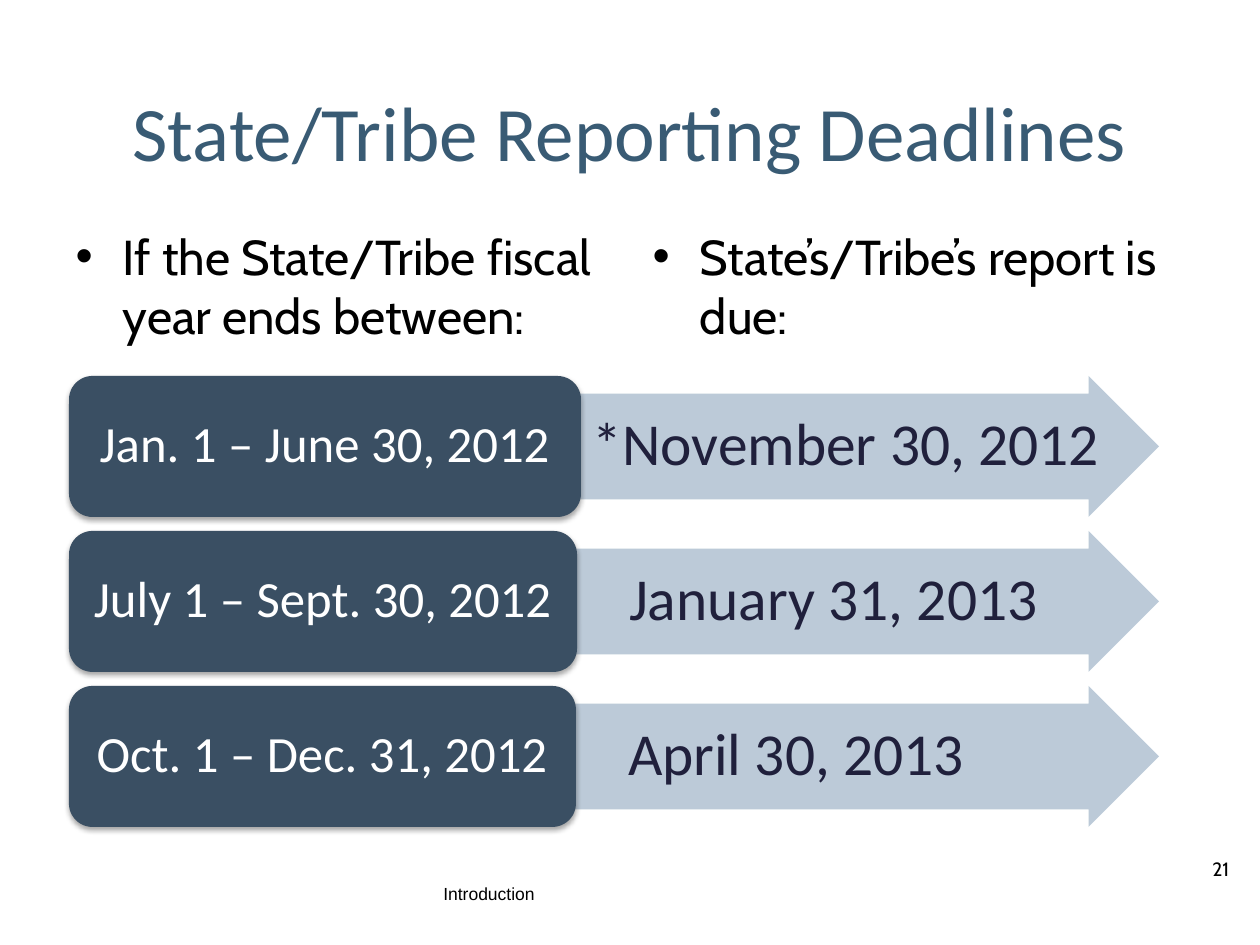
from lxml import etree
from pptx import Presentation
from pptx import util as u
from pptx.dml.color import RGBColor
from pptx.enum import shapes, text
from pptx.oxml import ns

SCALE = 914400 / 126  # EMU in one px
TITLE = RGBColor(0x39, 0x5B, 0x74)
BLACK = RGBColor(0, 0, 0)
WHITE = RGBColor(0xFF, 0xFF, 0xFF)
CARD = RGBColor(0x3A, 0x4F, 0x63)
ARROW = RGBColor(0xB5, 0xC5, 0xD4)
INK = RGBColor(0x20, 0x20, 0x3C)

# Row geometry in px
TOP, PITCH, HIGH = 376, 155, 141
LEFT, RIGHT = 69, 1159

# Period, due date, card width, arrow left, text indent
ROWS = [
    ("Jan. 1 – June 30, 2012", "*November 30, 2012", 512, 551, 42),
    ("July 1 – Sept. 30, 2012", "January 31, 2013", 508, 547, 82),
    ("Oct. 1 – Dec. 31, 2012", "April 30, 2013", 507, 546, 82),
]


def px(n):
    return u.Emu(round(n * SCALE))


def place(shape, *box):
    shape.left, shape.top, shape.width, shape.height = map(px, box)


def write(frame, words, size, font, color, align=None):
    frame.word_wrap = True
    frame.auto_size = text.MSO_AUTO_SIZE.NONE
    para = frame.paragraphs[0]
    para.alignment = align
    para.space_before = u.Pt(0)
    run = para.add_run()
    run.text = words
    run.font.size = u.Pt(size)
    run.font.name = font
    run.font.color.rgb = color
    return para


def fill_holder(holder, box, *style):
    place(holder, *box)
    write(holder.text_frame, *style)


def add_label(slide, box, *style):
    label = slide.shapes.add_textbox(*map(px, box))
    write(label.text_frame, *style)


def add_block(group, kind, box, color, pads, *style):
    block = group.shapes.add_shape(kind, *map(px, box))
    block.shadow.inherit = False
    block.fill.solid()
    block.fill.fore_color.rgb = color
    block.line.fill.background()
    frame = block.text_frame
    frame.margin_left, frame.margin_right = px(pads[0]), px(pads[1])
    frame.margin_top = frame.margin_bottom = px(3)
    frame.vertical_anchor = text.MSO_ANCHOR.MIDDLE
    write(frame, *style).line_spacing = 0.9
    return block


def set_alpha(color, percent):
    etree.SubElement(color, ns.qn("a:alpha"), val=str(percent * 1000))


def add_shadow(block):
    effects = block._element.spPr.find(ns.qn("a:effectLst"))
    outer = etree.SubElement(
        effects, ns.qn("a:outerShdw"), blurRad=str(u.Pt(3.1)),
        dist=str(u.Pt(1.8)), dir="5400000", rotWithShape="0")
    set_alpha(etree.SubElement(outer, ns.qn("a:srgbClr"), val="000000"), 35)


def add_row(group, top, period, due, wide, start, indent):
    # Arrow with the due date, behind the card
    arrow = add_block(
        group, shapes.MSO_SHAPE.RIGHT_ARROW,
        (start, top, RIGHT - start, HIGH), ARROW, (indent, 3),
        due, 34, "Calibri", INK, text.PP_ALIGN.LEFT)
    arrow.adjustments[0] = 0.75
    arrow.adjustments[1] = 0.5
    set_alpha(arrow._element.spPr.find(".//" + ns.qn("a:srgbClr")), 90)

    # Card with the period
    card = add_block(
        group, shapes.MSO_SHAPE.ROUNDED_RECTANGLE,
        (LEFT, top, wide, HIGH), CARD, (15, 15),
        period, 29, "Calibri", WHITE, text.PP_ALIGN.CENTER)
    add_shadow(card)


def main():
    deck = Presentation()
    deck.slide_width, deck.slide_height = px(1260), px(945)
    slide = deck.slides.add_slide(deck.slide_layouts[3])

    # Title and column heads
    title, left, right = slide.placeholders
    fill_holder(title, (63, 67, 1134, 128), "State/Tribe Reporting Deadlines",
                44, "Calibri", TITLE, text.PP_ALIGN.CENTER)
    fill_holder(left, (63, 220, 557, 624),
                "If the State/Tribe fiscal year ends between:",
                28, "Cabin", BLACK)
    fill_holder(right, (640, 220, 557, 624),
                "State’s/Tribe’s report is due:", 28, "Cabin", BLACK)

    # Deadline rows
    group = slide.shapes.add_group_shape()
    for i, row in enumerate(ROWS):
        add_row(group, TOP + i * PITCH, *row)

    # Footer
    add_label(slide, (1200, 851, 54, 50), "21", 11, "Cabin", BLACK)
    add_label(slide, (431, 877, 399, 50), "Introduction", 10, "Arial", BLACK)

    deck.save("out.pptx")


if __name__ == "__main__":
    main()
